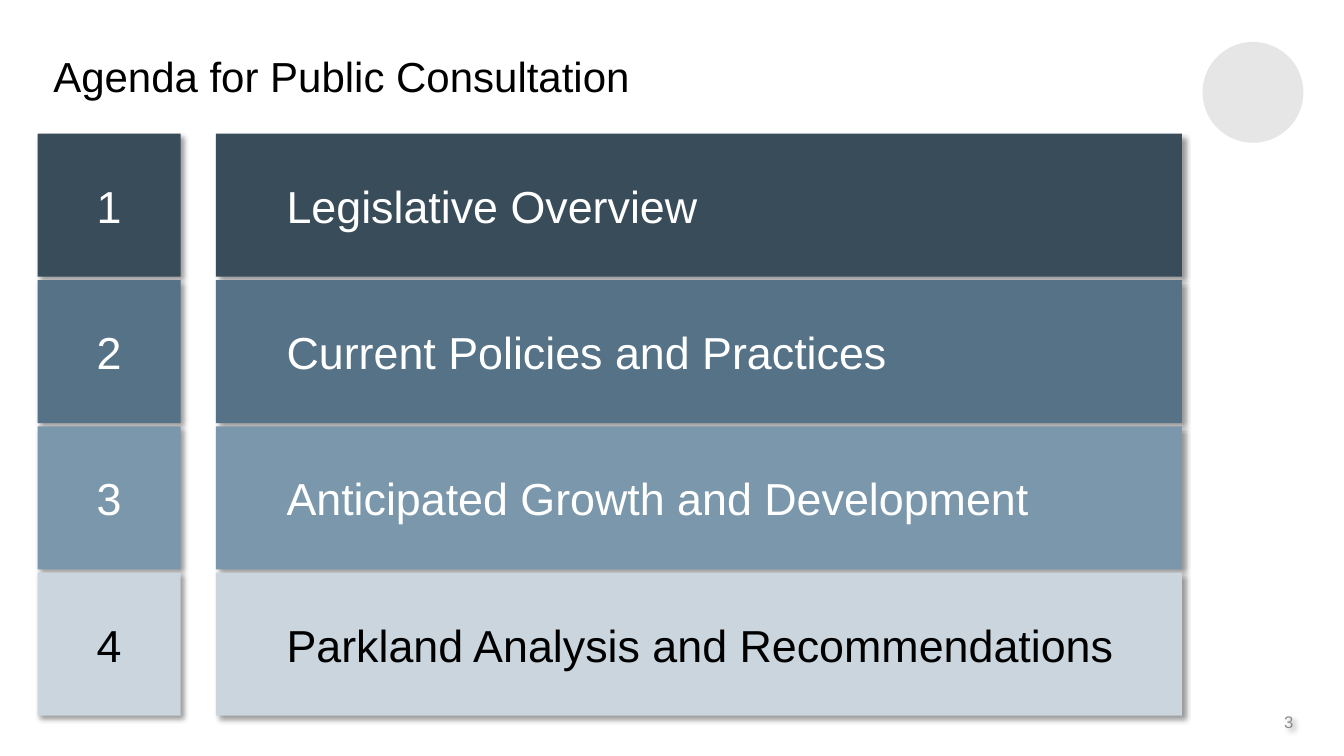
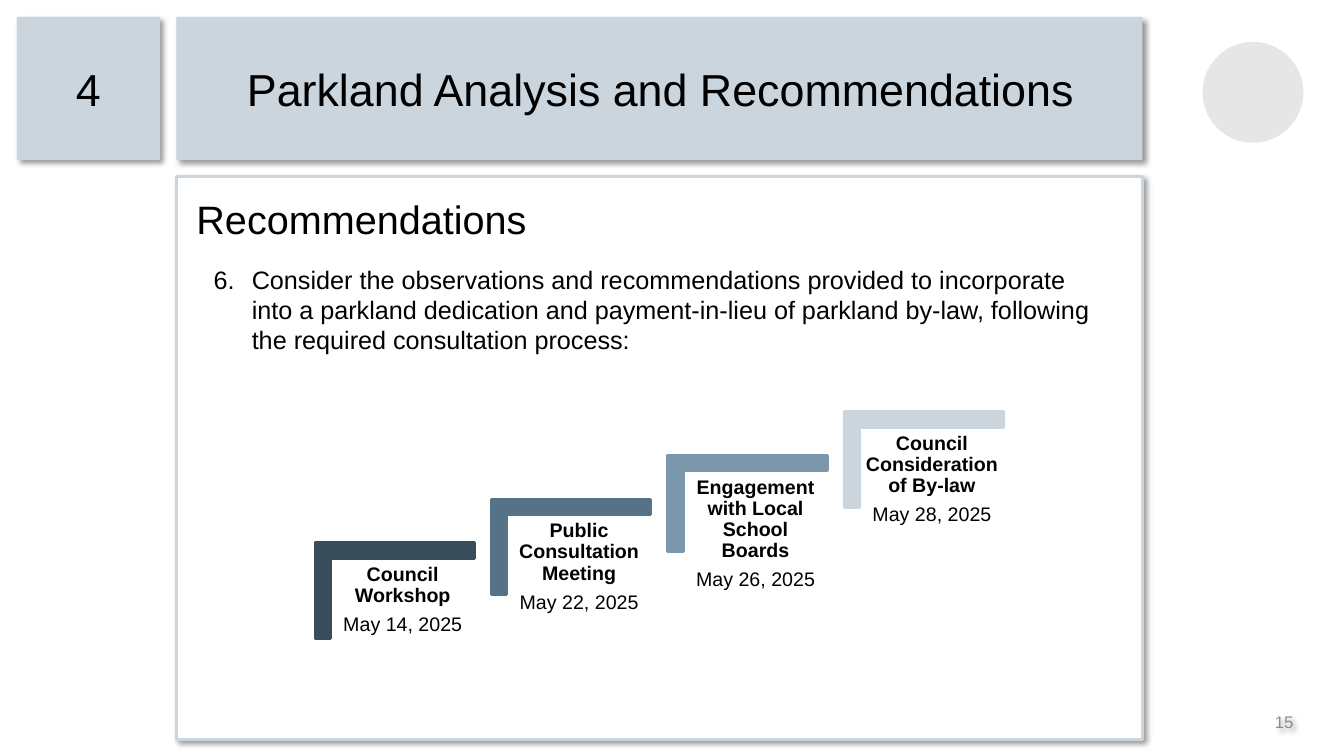
from lxml.etree import SubElement
from pptx import Presentation
from pptx.dml.color import RGBColor
from pptx.enum.shapes import MSO_SHAPE
from pptx.enum.text import MSO_ANCHOR, PP_ALIGN
from pptx.oxml.ns import qn
from pptx.util import Pt

FONT = "Arial"
BLACK = RGBColor(0x00, 0x00, 0x00)
WHITE = RGBColor(0xFF, 0xFF, 0xFF)
NAVY = RGBColor(0x39, 0x4C, 0x5A)
SLATE = RGBColor(0x55, 0x72, 0x87)
STEEL = RGBColor(0x7A, 0x97, 0xAB)
MIST = RGBColor(0xCA, 0xD5, 0xDD)
BADGE_GREY = RGBColor(0xE6, 0xE6, 0xE6)
PAGE_GREY = RGBColor(0x8C, 0x8C, 0x8C)

SECTION_COLOURS = [NAVY, SLATE, STEEL, MIST]
SECTIONS = [
    "Legislative Overview",
    "Current Policies and Practices",
    "Anticipated Growth and Development",
    "Parkland Analysis and Recommendations",
]
STEPS = [
    ("Council Workshop", "May 14, 2025"),
    ("Public Consultation Meeting", "May 22, 2025"),
    ("Engagement with Local School Boards", "May 26, 2025"),
    ("Council Consideration of By-law", "May 28, 2025"),
]

BAND_HEIGHT = 102.2
BAR_WIDTH = 690


def add_soft_shadow(shape):
    effects = SubElement(shape._element.spPr, qn("a:effectLst"))
    shadow = SubElement(effects, qn("a:outerShdw"), blurRad=str(Pt(4)), dist=str(Pt(3)),
                        dir=str(45 * 60000), algn="tl", rotWithShape="0")
    colour = SubElement(shadow, qn("a:srgbClr"), val=str(BLACK))
    SubElement(colour, qn("a:alpha"), val="40000")


def paint(shape, fill, line=None, shadow=False):
    shape.fill.solid()
    shape.fill.fore_color.rgb = fill
    if line is None:
        shape.line.fill.background()
    else:
        shape.line.color.rgb = line
        shape.line.width = Pt(2)
    if shadow:
        add_soft_shadow(shape)
    else:
        shape.shadow.inherit = False


def add_block(slide, kind, left, top, width, height, fill, line=None, shadow=False):
    shape = slide.shapes.add_shape(kind, Pt(left), Pt(top), Pt(width), Pt(height))
    paint(shape, fill, line, shadow)
    return shape


def add_corner(slide, left, top, width, height, thickness, colour):
    """Draw an angle with one arm along the top and one down the left side."""
    right, bottom = left + width, top + height
    inner_left, inner_top = left + thickness, top + thickness
    builder = slide.shapes.build_freeform(Pt(left), Pt(top))
    outline = [(right, top), (right, inner_top), (inner_left, inner_top),
               (inner_left, bottom), (left, bottom)]
    builder.add_line_segments([(Pt(x), Pt(y)) for x, y in outline], close=True)
    paint(builder.convert_to_shape(), colour, line=colour)


def add_text_box(slide, left, top, width, height, inset=(7.2, 3.6), anchor=MSO_ANCHOR.MIDDLE):
    box = slide.shapes.add_textbox(Pt(left), Pt(top), Pt(width), Pt(height))
    frame = box.text_frame
    frame.word_wrap = True
    frame.vertical_anchor = anchor
    frame.margin_left = frame.margin_right = Pt(inset[0])
    frame.margin_top = frame.margin_bottom = Pt(inset[1])
    return box


def write(paragraph, text, size, colour=BLACK, bold=False, align=PP_ALIGN.LEFT):
    paragraph.alignment = align
    run = paragraph.add_run()
    run.text = text
    run.font.name = FONT
    run.font.size = Pt(size)
    run.font.bold = bold
    run.font.color.rgb = colour


def number_paragraph(paragraph, start, indent):
    properties = paragraph._p.get_or_add_pPr()
    properties.set("marL", str(Pt(indent)))
    properties.set("indent", str(-Pt(indent)))
    SubElement(properties, qn("a:buFont"), typeface="+mj-lt")
    SubElement(properties, qn("a:buAutoNum"), type="arabicPeriod", startAt=str(start))


def add_section_band(slide, section, number_left, bar_left, top):
    """Draw the numbered square and the title bar of one section."""
    fill = SECTION_COLOURS[section - 1]
    colour = BLACK if fill == MIST else WHITE
    square = add_block(slide, MSO_SHAPE.RECTANGLE, number_left, top,
                       BAND_HEIGHT, BAND_HEIGHT, fill, shadow=True)
    write(square.text_frame.paragraphs[0], str(section), 32, colour, align=PP_ALIGN.CENTER)
    bar = add_block(slide, MSO_SHAPE.RECTANGLE, bar_left, top,
                    BAR_WIDTH, BAND_HEIGHT, fill, shadow=True)
    bar.text_frame.margin_left = Pt(50.4)
    write(bar.text_frame.paragraphs[0], SECTIONS[section - 1], 32, colour)


def add_process_step(slide, index, heading, date):
    left = 236.2 + 126 * index
    top = 398.9 - 31.2 * index
    add_corner(slide, left - 11.2, top - 11.2, 113.8, 68.4, 11, SECTION_COLOURS[index])
    frame = add_text_box(slide, left, top, 103, 90, (4.3, 4.3), MSO_ANCHOR.TOP).text_frame
    for paragraph, text, bold in ((frame.paragraphs[0], heading, True),
                                  (frame.add_paragraph(), date, False)):
        write(paragraph, text, 14, bold=bold, align=PP_ALIGN.CENTER)
        paragraph.line_spacing = 0.9
        paragraph.space_after = Pt(5.5)


def start_slide(presentation, page):
    """Add a blank slide with the badge and the page number."""
    slide = presentation.slides.add_slide(presentation.slide_layouts[6])
    add_block(slide, MSO_SHAPE.OVAL, 859, 30, 72, 72, BADGE_GREY)
    box = add_text_box(slide, 846, 501, 85, 28.8)
    write(box.text_frame.paragraphs[0], str(page), 12, PAGE_GREY, align=PP_ALIGN.RIGHT)
    add_soft_shadow(box)
    return slide


def build_agenda(presentation):
    slide = start_slide(presentation, 3)
    title = add_text_box(slide, 28.1, 30.2, 814, 48.2, (10, 5))
    write(title.text_frame.paragraphs[0], "Agenda for Public Consultation", 30)
    for index in range(len(SECTIONS)):
        add_section_band(slide, index + 1, 26.8, 154.3, 95.5 + 104.5 * index)


def build_recommendations(presentation):
    slide = start_slide(presentation, 15)
    add_section_band(slide, 4, 12, 126, 12)
    add_block(slide, MSO_SHAPE.RECTANGLE, 126, 126, BAR_WIDTH, 402, WHITE,
              line=MIST, shadow=True)
    heading = add_text_box(slide, 133.2, 139, 436, 34.6)
    write(heading.text_frame.paragraphs[0], "Recommendations", 28.3)

    body = add_text_box(slide, 142.6, 183.6, 653.8, 75.6, (10, 5), MSO_ANCHOR.TOP)
    paragraph = body.text_frame.paragraphs[0]
    write(paragraph, "Consider the observations and recommendations provided to incorporate "
                     "into a parkland dedication and payment-in-lieu of parkland by-law, "
                     "following the required consultation process:", 18)
    paragraph.space_before = paragraph.space_after = Pt(6)
    number_paragraph(paragraph, start=6, indent=27.2)

    for index, (step, date) in enumerate(STEPS):
        add_process_step(slide, index, step, date)


def main():
    presentation = Presentation()
    presentation.slide_width = Pt(960)
    presentation.slide_height = Pt(540)
    build_agenda(presentation)
    build_recommendations(presentation)
    presentation.save("out.pptx")


if __name__ == "__main__":
    main()
